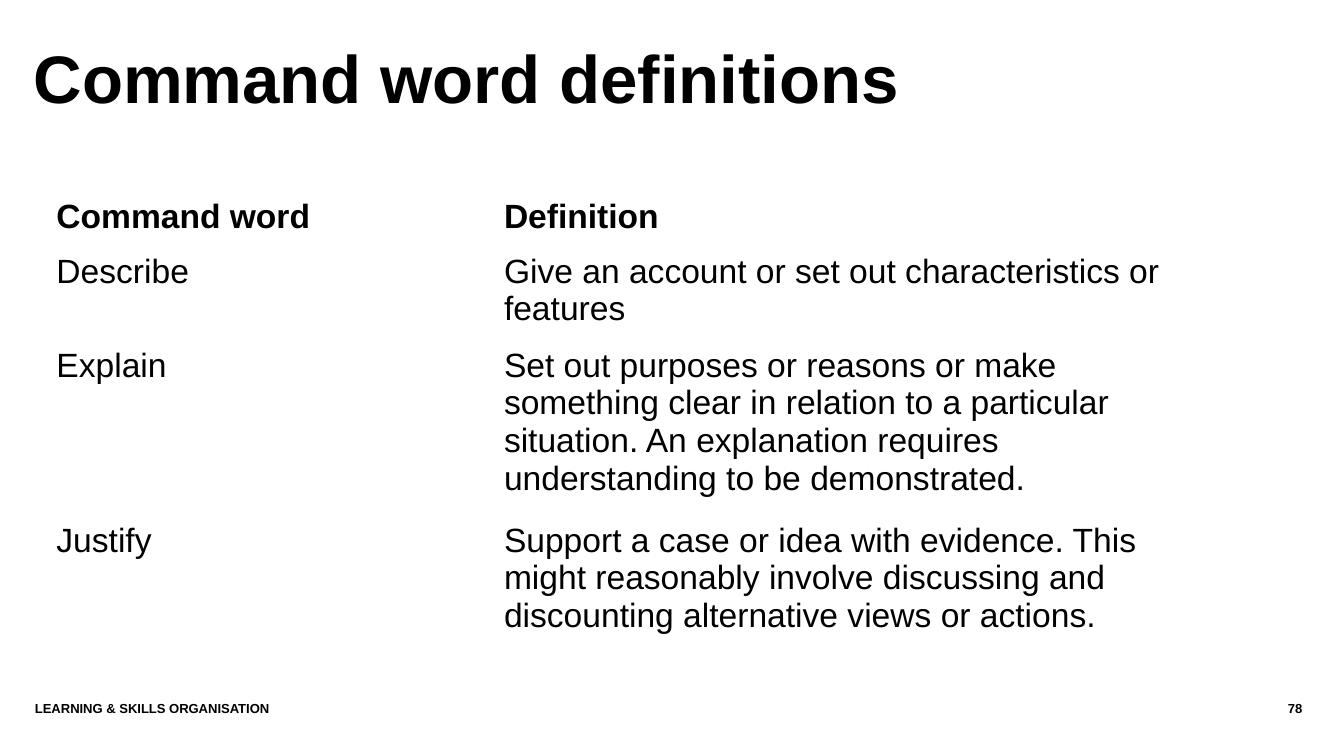
import dataclasses

import pptx
import pptx.dml.color
import pptx.enum.text
import pptx.oxml
import pptx.oxml.ns
import pptx.util

Inches = pptx.util.Inches
Align = pptx.enum.text.PP_ALIGN
Anchor = pptx.enum.text.MSO_ANCHOR
BLACK = "000000"
WHITE = "FFFFFF"


@dataclasses.dataclass
class Label:
    text: str
    left: float
    top: float
    width: float
    height: float
    size: float
    alignment: Align = Align.LEFT
    anchor: Anchor = Anchor.TOP
    line_spacing: float = 1.0
    bottom_margin: float = 0


@dataclasses.dataclass
class Definition:
    word: str
    meaning: str
    height: float
    bold: bool = False


LABELS = [
    Label("Command word definitions", 0.25, 0.27, 9.23, 0.76, 36,
          anchor=Anchor.MIDDLE, line_spacing=0.9, bottom_margin=0.09),
    Label("LEARNING & SKILLS ORGANISATION", 0.26, 5.21, 8.41, 0.3, 7),
    Label("78", 8.7, 5.21, 0.99, 0.3, 7, Align.RIGHT),
]
DEFINITIONS = [
    Definition("Command word", "Definition", 0.41, True),
    Definition("Describe", "Give an account or set out characteristics or features", 0.46),
    Definition("Explain", "Set out purposes or reasons or make something clear in relation "
               "to a particular situation. An explanation requires understanding to be "
               "demonstrated.", 0.41),
    Definition("Justify", "Support a case or idea with evidence. This might reasonably "
               "involve discussing and discounting alternative views or actions.", 0.41),
]
COLUMN_WIDTHS = [3.33, 5.37]
TABLE_HEIGHT = 3.41


def color(value: str) -> pptx.dml.color.RGBColor:
    return pptx.dml.color.RGBColor.from_string(value)


def apply(target, formats: dict) -> None:
    for name, value in formats.items():
        setattr(target, name, value)


def write(paragraph, text: str, size: float, bold: bool) -> None:
    run = paragraph.add_run()
    run.text = text
    apply(run.font, {"name": "Arial", "size": pptx.util.Pt(size), "bold": bold})
    run.font.color.rgb = color(BLACK)


def draw_label(slide, label: Label) -> None:
    shape = slide.shapes.add_textbox(*map(Inches, (label.left, label.top,
                                                   label.width, label.height)))
    apply(shape.text_frame, {"word_wrap": True, "vertical_anchor": label.anchor,
                             "margin_left": 0, "margin_right": 0, "margin_top": 0,
                             "margin_bottom": Inches(label.bottom_margin)})
    paragraph = shape.text_frame.paragraphs[0]
    apply(paragraph, {"alignment": label.alignment, "line_spacing": label.line_spacing})
    write(paragraph, label.text, label.size, True)


def draw_borders(cell, bottom_width: float) -> None:
    properties = cell._tc.get_or_add_tcPr()
    widths = {"lnL": 1, "lnR": 1, "lnT": 1, "lnB": bottom_width}
    for index, (side, width) in enumerate(widths.items()):
        properties.insert(index, pptx.oxml.parse_xml(
            f'<a:{side} {pptx.oxml.ns.nsdecls("a")} w="{pptx.util.Pt(width)}">'
            f'<a:solidFill><a:srgbClr val="{WHITE}"/></a:solidFill></a:{side}>'))


def draw_table(slide, definitions: list[Definition]) -> None:
    frame = slide.shapes.add_table(
        len(definitions), len(COLUMN_WIDTHS), Inches(0.32), Inches(1.42),
        Inches(sum(COLUMN_WIDTHS)), Inches(TABLE_HEIGHT))
    for column, width in zip(frame.table.columns, COLUMN_WIDTHS):
        column.width = Inches(width)
    for row, definition in zip(frame.table.rows, definitions):
        row.height = Inches(definition.height)
        for cell, text in zip(row.cells, (definition.word, definition.meaning)):
            write(cell.text_frame.paragraphs[0], text, 18, definition.bold)
            cell.fill.solid()
            cell.fill.fore_color.rgb = color(WHITE)
            draw_borders(cell, 3 if definition.bold else 1)
    frame.height = Inches(TABLE_HEIGHT)


def main() -> None:
    """Build the slide of command word definitions."""
    presentation = pptx.Presentation()
    width = Inches(10)
    apply(presentation, {"slide_width": width, "slide_height": width * 9 // 16})
    slide = presentation.slides.add_slide(presentation.slide_layouts[6])
    for label in LABELS:
        draw_label(slide, label)
    draw_table(slide, DEFINITIONS)
    presentation.save("out.pptx")


if __name__ == "__main__":
    main()
